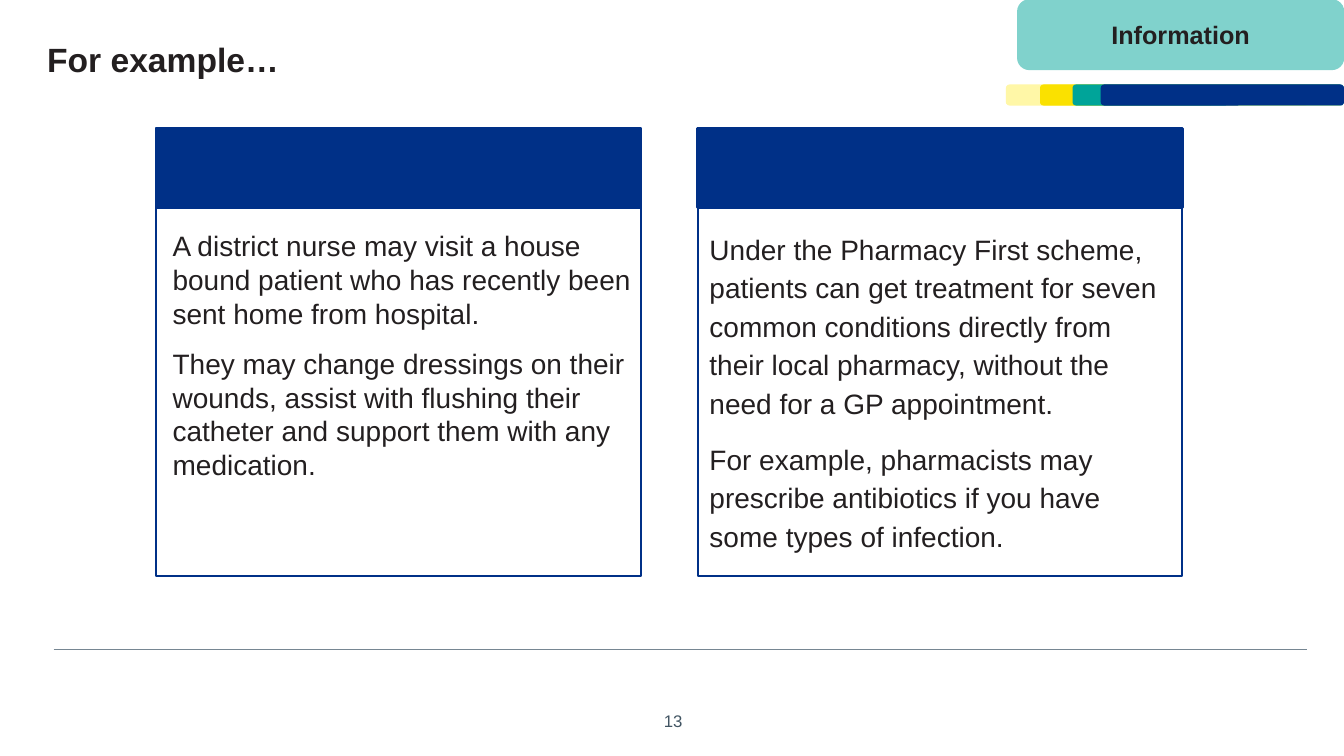
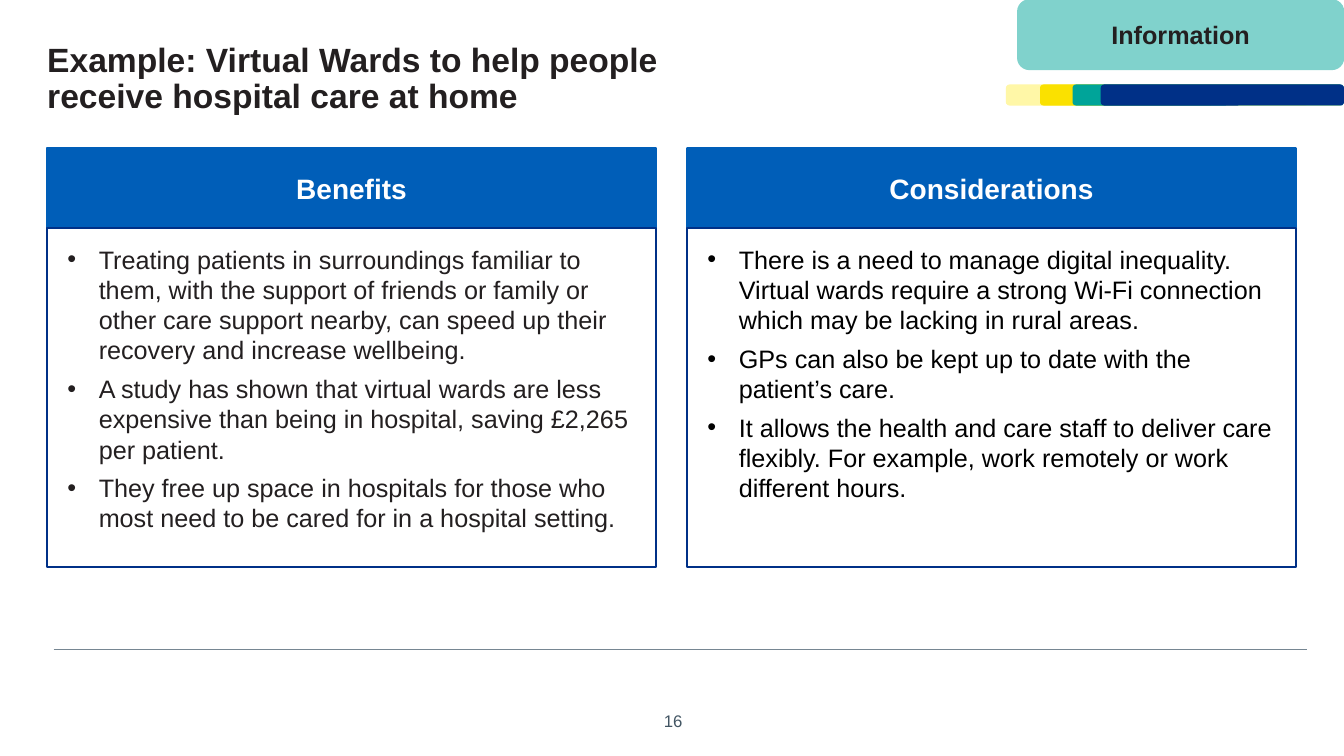
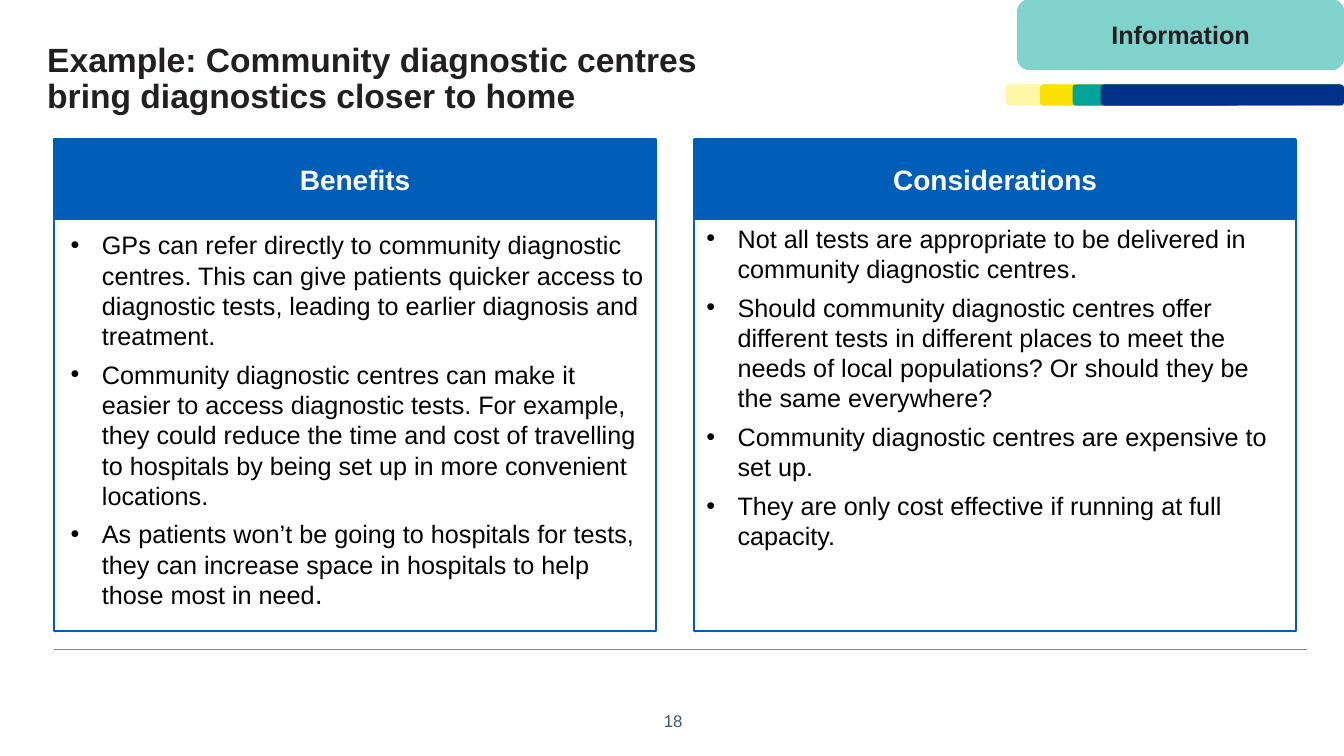
from dataclasses import dataclass

import lxml.etree
import pptx
import pptx.dml.color
import pptx.enum.shapes
import pptx.enum.text
import pptx.oxml.ns
import pptx.util

Cm = pptx.util.Cm
Pt = pptx.util.Pt
RGB = pptx.dml.color.RGBColor.from_string
Shapes = pptx.enum.shapes.MSO_SHAPE
Align = pptx.enum.text.PP_ALIGN
Anchor = pptx.enum.text.MSO_ANCHOR
qn = pptx.oxml.ns.qn


@dataclass(frozen=True)
class Theme:
    font: str = "Arial"
    stop_font: str = "DejaVu Sans"
    ink: str = "231F20"
    black: str = "000000"
    white: str = "FFFFFF"
    navy: str = "003087"
    blue: str = "005EB8"
    mint: str = "80D2CC"
    teal: str = "00A499"
    yellow: str = "FAE100"
    cream: str = "FFF7A7"
    rule: str = "768692"
    number: str = "425563"
    title_size: float = 24
    header_size: float = 20
    prose_size: float = 20
    bullet_size: float = 18
    badge_size: float = 18
    number_size: float = 12


THEME = Theme()
SLIDE_WIDTH = 33.87
SLIDE_HEIGHT = 19.05
HEADER_HEIGHT = 2.01
HEADER_LINES = (1.25, 2)


@dataclass(frozen=True)
class Box:
    left: float
    top: float
    width: float
    height: float

    def lengths(self) -> tuple:
        return tuple(Cm(v) for v in (self.left, self.top, self.width, self.height))


@dataclass(frozen=True)
class Run:
    text: str
    font: str = THEME.font


@dataclass(frozen=True)
class ParagraphStyle:
    size: float
    bulleted: bool = False
    before: float = 0
    after: float = 0
    spacing: float = 1.0


@dataclass(frozen=True)
class Column:
    heading: str
    paragraphs: tuple
    style: ParagraphStyle
    insets: tuple
    ink: str


@dataclass(frozen=True)
class Page:
    number: str
    title: str
    title_width: float
    lefts: tuple
    width: float
    header_top: float
    body_top: float
    body_height: float
    header_colour: str
    border_colour: str
    columns: tuple


def add_run(paragraph, text: str, size: float, colour: str,
            bold: bool = False, font: str = THEME.font) -> None:
    run = paragraph.add_run()
    run.text = text
    run.font.name = font
    run.font.size = Pt(size)
    run.font.bold = bold
    run.font.color.rgb = RGB(colour)


def set_insets(frame, insets: tuple) -> None:
    (frame.margin_left, frame.margin_top,
     frame.margin_right, frame.margin_bottom) = (Cm(v) for v in insets)


def add_block(slide, kind, box: Box, fill: str | None = None,
              line: str | None = None, line_width: float = 1):
    block = slide.shapes.add_shape(kind, *box.lengths())
    block.shadow.inherit = False
    if fill:
        block.fill.solid()
        block.fill.fore_color.rgb = RGB(fill)
    else:
        block.fill.background()
    if line:
        block.line.color.rgb = RGB(line)
        block.line.width = Pt(line_width)
    else:
        block.line.fill.background()
    return block


def add_label(block, text: str, size: float, colour: str) -> None:
    frame = block.text_frame
    frame.word_wrap = True
    frame.vertical_anchor = Anchor.MIDDLE
    frame.paragraphs[0].alignment = Align.CENTER
    add_run(frame.paragraphs[0], text, size, colour, bold=True)


def add_bullet(paragraph) -> None:
    properties = paragraph._p.get_or_add_pPr()
    properties.set("marL", str(Cm(0.79)))
    properties.set("indent", str(-Cm(0.79)))
    lxml.etree.SubElement(properties, qn("a:buFont")).set("typeface", THEME.font)
    lxml.etree.SubElement(properties, qn("a:buChar")).set("char", "•")


def add_body(slide, box: Box, border: str, column: Column) -> None:
    body = add_block(slide, Shapes.RECTANGLE, box, line=border, line_width=1.5)
    frame = body.text_frame
    frame.word_wrap = True
    frame.vertical_anchor = Anchor.TOP
    set_insets(frame, column.insets)
    style = column.style
    for index, runs in enumerate(column.paragraphs):
        paragraph = frame.add_paragraph() if index else frame.paragraphs[0]
        if style.bulleted:
            add_bullet(paragraph)
        paragraph.alignment = Align.LEFT
        paragraph.line_spacing = style.spacing
        paragraph.space_before = Pt(style.before if index else 0)
        paragraph.space_after = Pt(style.after)
        for run in runs:
            add_run(paragraph, run.text, style.size, column.ink, font=run.font)


def add_furniture(slide, number: str) -> None:
    page_number = slide.shapes.add_textbox(*Box(16.41, 17.78, 1.04, 0.76).lengths())
    page_number.text_frame.word_wrap = False
    number_line = page_number.text_frame.paragraphs[0]
    number_line.alignment = Align.RIGHT
    add_run(number_line, number, THEME.number_size, THEME.number)

    footer_rule = slide.shapes.add_connector(
        pptx.enum.shapes.MSO_CONNECTOR.STRAIGHT,
        Cm(1.35), Cm(16.36), Cm(32.94), Cm(16.36))
    footer_rule.line.color.rgb = RGB(THEME.rule)
    footer_rule.line.width = Pt(0.5)
    lxml.etree.SubElement(footer_rule._element.spPr, qn("a:effectLst"))

    stripes = ((25.35, THEME.cream), (26.21, THEME.yellow),
               (27.03, THEME.teal), (27.74, THEME.navy))
    for left, colour in stripes:
        width = round(min(7.62, SLIDE_WIDTH - left), 2)
        add_block(slide, Shapes.ROUNDED_RECTANGLE,
                  Box(left, 2.13, width, 0.53), fill=colour)

    badge = add_block(slide, Shapes.ROUNDED_RECTANGLE, Box(25.65, 0, 8.21, 1.75),
                      fill=THEME.mint, line=THEME.mint)
    add_label(badge, "Information", THEME.badge_size, THEME.ink)


def format_title(slide, text: str, width: float) -> None:
    title = slide.shapes.title
    title.left, title.top, title.width, title.height = Box(1.19, 1.09, width, 2.5).lengths()
    frame = title.text_frame
    frame.word_wrap = True
    frame.auto_size = pptx.enum.text.MSO_AUTO_SIZE.NONE
    frame.vertical_anchor = Anchor.TOP
    set_insets(frame, (0, 0, 0, 0))
    paragraph = frame.paragraphs[0]
    paragraph.alignment = Align.LEFT
    paragraph.line_spacing = 0.9
    paragraph.space_before = Pt(0)
    add_run(paragraph, text, THEME.title_size, THEME.ink, bold=True)


def add_page(presentation, page: Page) -> None:
    slide = presentation.slides.add_slide(presentation.slide_layouts[5])
    add_furniture(slide, page.number)
    format_title(slide, page.title, page.title_width)
    for left, header_line, column in zip(page.lefts, HEADER_LINES, page.columns):
        header = add_block(slide, Shapes.RECTANGLE,
                           Box(left, page.header_top, page.width, HEADER_HEIGHT),
                           fill=page.header_colour, line=page.header_colour,
                           line_width=header_line)
        if column.heading:
            add_label(header, column.heading, THEME.header_size, THEME.white)
        add_body(slide, Box(left, page.body_top, page.width, page.body_height),
                 page.border_colour, column)


BULLETS = ParagraphStyle(THEME.bullet_size, bulleted=True, before=6)
FULL_STOP = Run(".", THEME.stop_font)

PAGES = (
    Page(
        "13", "For example…", 16.69, (3.94, 17.58), 12.22, 3.23, 4.2, 10.31,
        THEME.navy, THEME.navy,
        (
            Column("", (
                (Run("A district nurse may visit a house bound patient who has "
                     "recently been sent home from hospital."),),
                (Run("They may change dressings on their wounds, assist with flushing "
                     "their catheter and support them with any medication."),),
            ), ParagraphStyle(THEME.prose_size, after=12),
                (0.41, 1.57, 0.25, 0.13), THEME.ink),
            Column("", (
                (Run("Under the Pharmacy First scheme, patients can get treatment for "
                     "seven common conditions directly from their local pharmacy, "
                     "without the need for a GP appointment."),),
                (Run("For example, pharmacists may prescribe antibiotics if you have "
                     "some types of infection."),),
            ), ParagraphStyle(THEME.prose_size, after=12, spacing=1.15),
                (0.3, 1.52, 0.25, 0.13), THEME.ink),
        ),
    ),
    Page(
        "16", "Example: Virtual Wards to help people receive hospital care at home",
        17.48, (1.19, 17.32), 15.34, 3.73, 5.74, 8.56, THEME.blue, THEME.navy,
        (
            Column("Benefits", (
                (Run("Treating patients in surroundings familiar to them, with the "
                     "support of friends or family or other care support nearby, can "
                     "speed up their recovery and increase wellbeing."),),
                (Run("A study has shown that virtual wards are less expensive than "
                     "being in hospital, saving £2,265 per patient."),),
                (Run("They free up space in hospitals for those who most need to be "
                     "cared for in a hospital setting."),),
            ), BULLETS, (0.51, 0.41, 0.3, 0.13), THEME.ink),
            Column("Considerations", (
                (Run("There is a need to manage digital inequality. Virtual wards "
                     "require a strong Wi-Fi connection which may be lacking in rural "
                     "areas."),),
                (Run("GPs can also be kept up to date with the patient’s care."),),
                (Run("It allows the health and care staff to deliver care flexibly. "
                     "For example, work remotely or work different hours."),),
            ), BULLETS, (0.51, 0.41, 0.25, 0.13), THEME.black),
        ),
    ),
    Page(
        "18", "Example: Community diagnostic centres bring diagnostics closer to home",
        18.16, (1.37, 17.5), 15.16, 3.51, 5.49, 10.41, THEME.blue, THEME.blue,
        (
            Column("Benefits", (
                (Run("GPs can refer directly to community diagnostic centres. This can "
                     "give patients quicker access to diagnostic tests, leading to "
                     "earlier diagnosis and treatment."),),
                (Run("Community diagnostic centres can make it easier to access "
                     "diagnostic tests. For example, they could reduce the time and "
                     "cost of travelling to hospitals by being set up in more "
                     "convenient locations."),),
                (Run("As patients won’t be going to hospitals for tests, they can "
                     "increase space in hospitals to help those most in need"),
                 FULL_STOP),
            ), BULLETS, (0.41, 0.3, 0.3, 0.13), THEME.black),
            Column("Considerations", (
                (Run("Not all tests are appropriate to be delivered in community "
                     "diagnostic centres"), FULL_STOP),
                (Run("Should community diagnostic centres offer different tests in "
                     "different places to meet the needs of local populations? Or "
                     "should they be the same everywhere?"),),
                (Run("Community diagnostic centres are expensive to set up."),),
                (Run("They are only cost effective if running at full capacity."),),
            ), BULLETS, (0.3, 0.13, 0.25, 0.13), THEME.black),
        ),
    ),
)


def main() -> None:
    presentation = pptx.Presentation()
    presentation.slide_width = Cm(SLIDE_WIDTH)
    presentation.slide_height = Cm(SLIDE_HEIGHT)
    for page in PAGES:
        add_page(presentation, page)
    presentation.save("out.pptx")


if __name__ == "__main__":
    main()
